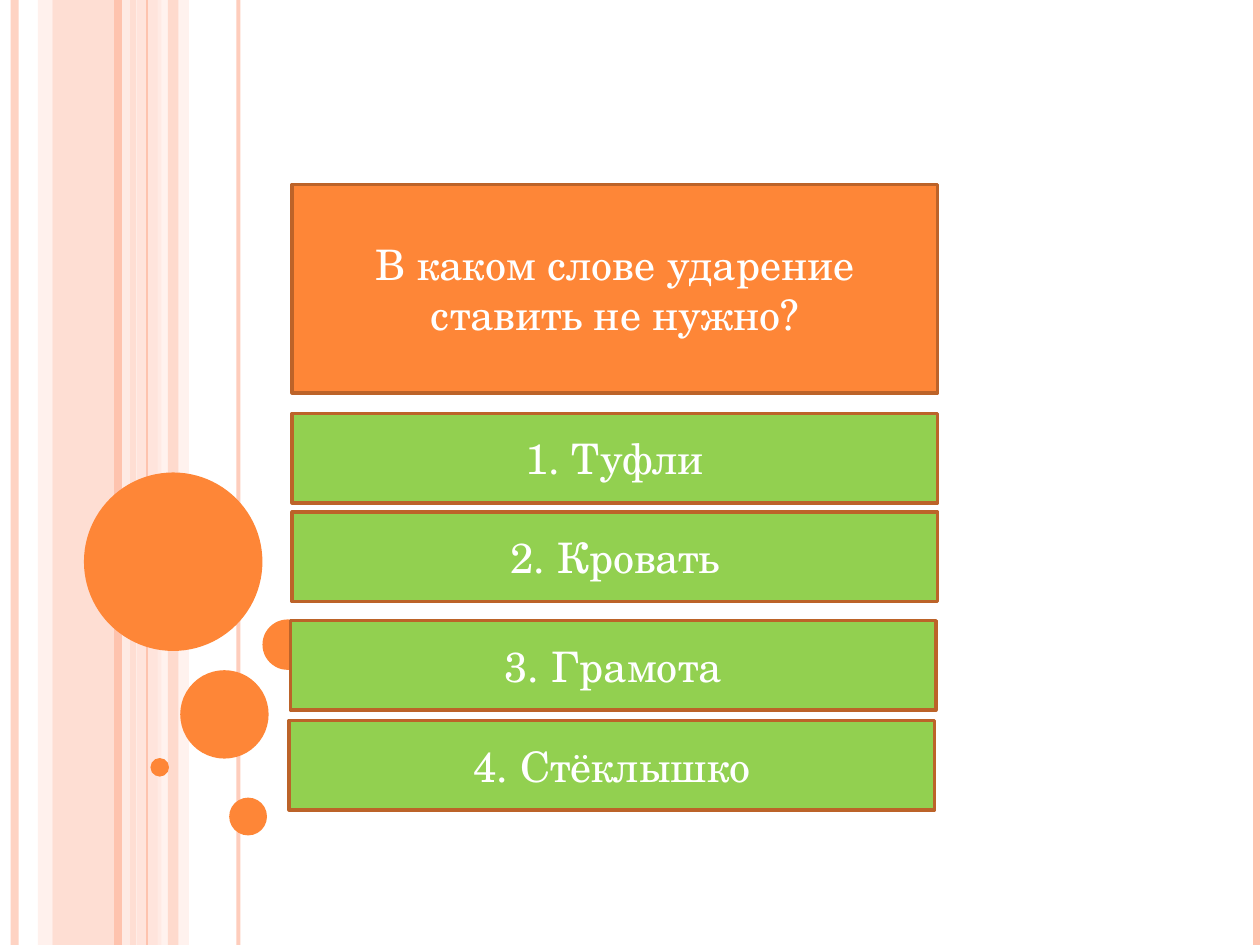
from lxml import etree
from pptx import Presentation
from pptx.dml.color import RGBColor
from pptx.enum.shapes import MSO_CONNECTOR, MSO_SHAPE
from pptx.enum.text import MSO_ANCHOR, PP_ALIGN
from pptx.oxml.ns import qn
from pptx.util import Pt

RECT, OVAL = MSO_SHAPE.RECTANGLE, MSO_SHAPE.OVAL
LINE = MSO_CONNECTOR.STRAIGHT
MID, CENTER = MSO_ANCHOR.MIDDLE, PP_ALIGN.CENTER

WIDE, HIGH = 720, 540
FONT = "TeX Gyre Schola"
ORANGE, GREEN, BROWN, WHITE = "FE8637", "92D050", "BC6329", "FFFFFF"
ROSE, PINK, PALE = "FEC3AE", "FFD9CE", "FFEDE8"

# Bands: left, width, colour, opacity in percent
BANDS = [
    (30, 48, ROSE, 54),
    (21.6, 8.2, PINK, 36),
    (78, 14.2, PINK, 70),
    (90, 18, PALE, 71),
]
TOP_BAND = (96, 6, ROSE, 51)

# Stripes: centre, width, colour, opacity in percent
STRIPES = [
    (8.4, 4.5, ROSE, 73),
    (72, 4.5, PALE, 83),
    (67.2, 4.5, ROSE, 100),
    (136.2, 2.25, ROSE, 82),
    (84, 0.75, ROSE, 100),
    (718, 4.5, ROSE, 100),
]

# Dots: left, top, size
DOTS = [
    (48, 270, 102),
    (103, 383, 50.5),
    (86, 433.2, 10.6),
    (131, 455.8, 21.6),
    (150, 354, 28.8),
]

# Boxes: text, left, top, height, fill
BOX_W, ROW_H = 368.8, 51.1
BOXES = [
    ("В каком слове ударение ставить не нужно?", 167, 105.5, 119, ORANGE),
    ("1. Туфли", 167, 236.2, ROW_H, GREEN),
    ("2. Кровать", 167, 292.6, ROW_H, GREEN),
    ("3. Грамота", 166, 354.7, ROW_H, GREEN),
    ("4. Стёклышко", 165.3, 411.7, ROW_H, GREEN),
]


def paint(fill, tone, alpha=100):
    fill.solid()
    fill.fore_color.rgb = RGBColor.from_string(tone)
    if alpha < 100:
        node = fill._xPr.find(".//" + qn("a:srgbClr"))
        etree.SubElement(node, qn("a:alpha"), val=str(alpha * 1000))


def add_form(kind, left, top, wide, high, tone, alpha=100):
    form = slide.shapes.add_shape(kind, Pt(left), Pt(top), Pt(wide), Pt(high))
    form.shadow.inherit = False
    paint(form.fill, tone, alpha)
    form.line.fill.background()
    return form


def add_band(left, wide, tone, alpha):
    add_form(RECT, left, 0, wide, HIGH, tone, alpha)


def add_stripe(x, wide, tone, alpha):
    line = slide.shapes.add_connector(LINE, Pt(x), 0, Pt(x), Pt(HIGH))
    line.line.width = Pt(wide)
    paint(line.line.fill, tone, alpha)
    etree.SubElement(line._element.spPr, qn("a:effectLst"))


def write(form, text, size=24, tone=WHITE, font=FONT, align=CENTER):
    frame = form.text_frame
    frame.word_wrap = True
    frame.vertical_anchor = MID
    para = frame.paragraphs[0]
    para.alignment = align
    run = para.add_run()
    run.text = text
    run.font.size = Pt(size)
    run.font.name = font
    paint(run.font.fill, tone)


deck = Presentation()
deck.slide_width, deck.slide_height = Pt(WIDE), Pt(HIGH)
slide = deck.slides.add_slide(deck.slide_layouts[6])
paint(slide.background.fill, WHITE)

# Backdrop on the left and right edges
for band in BANDS:
    add_band(*band)
for stripe in STRIPES:
    add_stripe(*stripe)
add_band(*TOP_BAND)
for left, top, size in DOTS:
    add_form(OVAL, left, top, size, size, ORANGE)

# Question and answers
for text, left, top, high, tone in BOXES:
    box = add_form(RECT, left, top, BOX_W, high, tone)
    box.line.width = Pt(2)
    paint(box.line.fill, BROWN)
    write(box, text)

deck.save("out.pptx")
